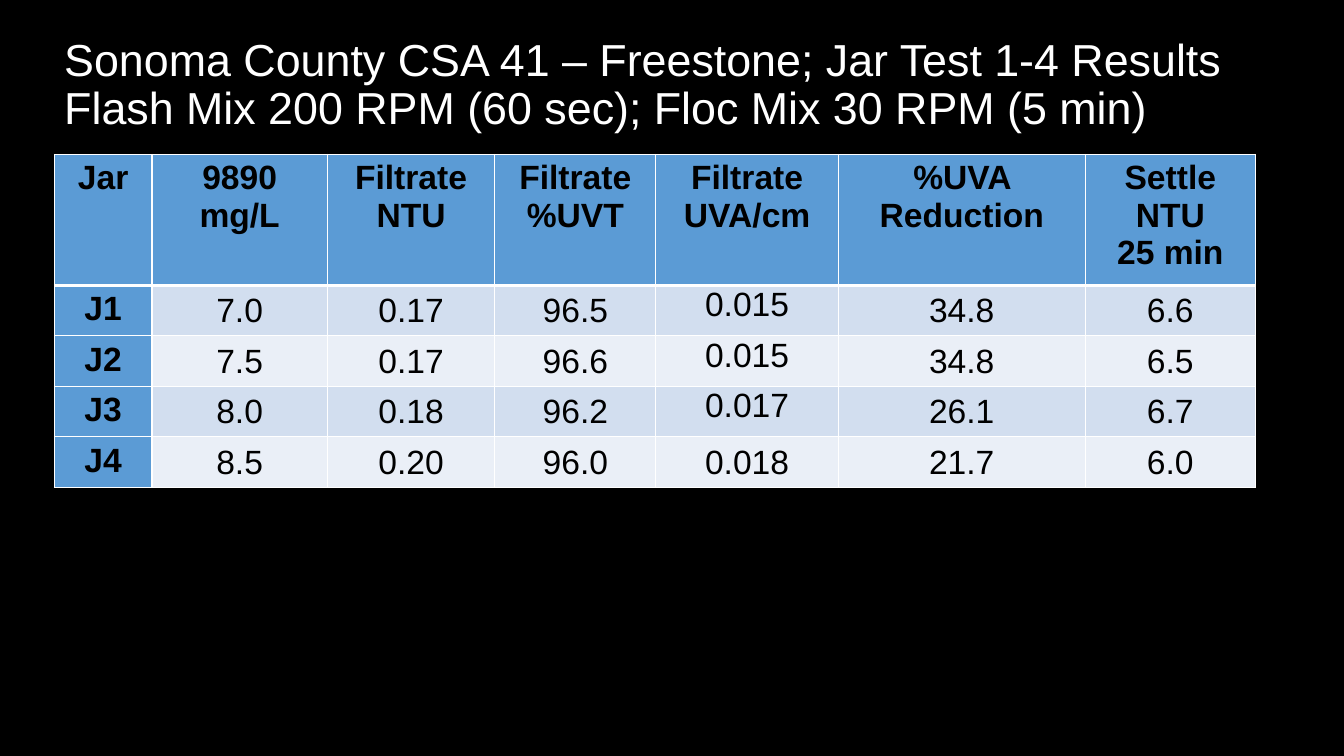
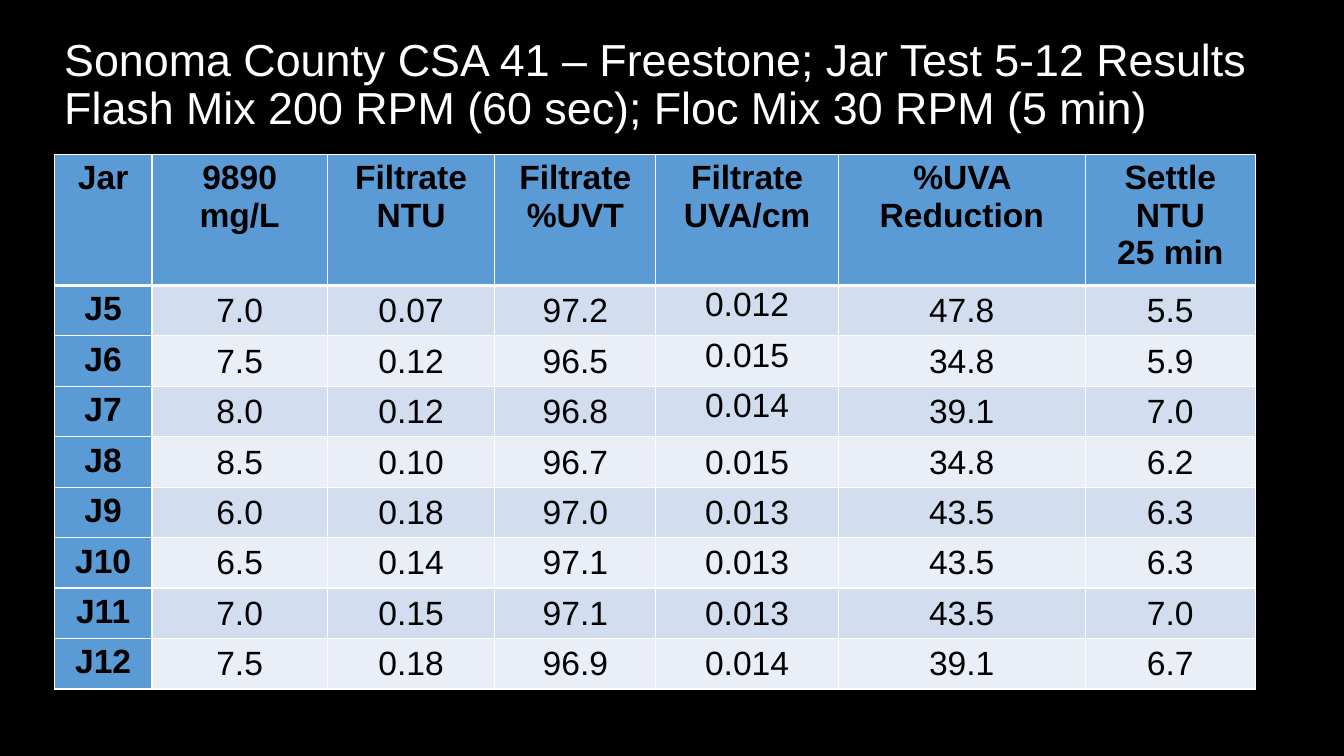
"""Builds two slides of jar test results."""
from lxml import etree
from pptx import Presentation
from pptx.dml.color import RGBColor
from pptx.enum.text import MSO_ANCHOR, PP_ALIGN
from pptx.oxml.ns import qn
from pptx.util import Cm, Pt

CENTER = PP_ALIGN.CENTER
TOP, MIDDLE = MSO_ANCHOR.TOP, MSO_ANCHOR.MIDDLE

COLORS = {
    "background": "000000",
    "title": "FFFFFF",
    "text": "000000",
    "border": "FFFFFF",
    "label": "5B9BD5",
    "odd": "D2DEEF",
    "even": "EAEFF7",
}
TITLE_FONT = {"name": "Arial", "size": Pt(32), "bold": False}
LABEL_FONT = {"name": "Arial", "size": Pt(24), "bold": True}
VALUE_FONT = {**LABEL_FONT, "bold": False}
LABEL_CELL = {"vertical_anchor": TOP}
VALUE_CELL = {
    "vertical_anchor": MIDDLE,
    "margin_left": Cm(0.02),
    "margin_right": Cm(0.02),
    "margin_top": Cm(0.02),
    "margin_bottom": Cm(0),
}

LEFT = 1.37
COLUMN_WIDTHS = [2.46, 4.42, 4.22, 4.06, 4.6, 6.22, 4.29]
HEADER_HEIGHT, ROW_HEIGHT = 3.07, 1.2
THIN, THICK = 1, 3
UVA_COLUMN, LAST_RAISED_ROW = 4, 3

HEADERS = [
    "Jar", "9890\nmg/L", "Filtrate\nNTU", "Filtrate\n%UVT",
    "Filtrate\nUVA/cm", "%UVA Reduction", "Settle\nNTU\n25 min",
]
JAR_TESTS = {
    "1-4": [
        ["J1", "7.0", "0.17", "96.5", "0.015", "34.8", "6.6"],
        ["J2", "7.5", "0.17", "96.6", "0.015", "34.8", "6.5"],
        ["J3", "8.0", "0.18", "96.2", "0.017", "26.1", "6.7"],
        ["J4", "8.5", "0.20", "96.0", "0.018", "21.7", "6.0"],
    ],
    "5-12": [
        ["J5", "7.0", "0.07", "97.2", "0.012", "47.8", "5.5"],
        ["J6", "7.5", "0.12", "96.5", "0.015", "34.8", "5.9"],
        ["J7", "8.0", "0.12", "96.8", "0.014", "39.1", "7.0"],
        ["J8", "8.5", "0.10", "96.7", "0.015", "34.8", "6.2"],
        ["J9", "6.0", "0.18", "97.0", "0.013", "43.5", "6.3"],
        ["J10", "6.5", "0.14", "97.1", "0.013", "43.5", "6.3"],
        ["J11", "7.0", "0.15", "97.1", "0.013", "43.5", "7.0"],
        ["J12", "7.5", "0.18", "96.9", "0.014", "39.1", "6.7"],
    ],
}


def apply(target, values):
    """Set each named attribute of the target."""
    for name, value in values.items():
        setattr(target, name, value)


class Deck:
    """Holds the shared style and the current slide."""

    def __init__(self):
        """Start a widescreen presentation."""
        self.presentation = Presentation()
        apply(self.presentation, {"slide_width": Cm(33.87), "slide_height": Cm(19.05)})
        self.slide = None

    def add_slide(self):
        """Add a blank slide with the dark background."""
        self.slide = self.presentation.slides.add_slide(self.presentation.slide_layouts[6])
        self.paint(self.slide.background.fill, "background")

    def paint(self, fill, color):
        """Fill with a named colour."""
        fill.solid()
        fill.fore_color.rgb = RGBColor.from_string(COLORS[color])

    def style_runs(self, frame, font, color, paragraph_format):
        """Format every paragraph and run of a text frame."""
        for paragraph in frame.paragraphs:
            apply(paragraph, paragraph_format)
            for run in paragraph.runs:
                apply(run.font, font)
                run.font.color.rgb = RGBColor.from_string(COLORS[color])

    def add_title(self, text):
        """Place the slide title."""
        title = self.slide.shapes.add_textbox(Cm(LEFT), Cm(0.33), Cm(31.98), Cm(3.68))
        frame = title.text_frame
        apply(frame, {"word_wrap": True, "vertical_anchor": MIDDLE})
        frame.paragraphs[0].text = text
        self.style_runs(frame, TITLE_FONT, "title", {"line_spacing": 0.9})

    def add_borders(self, cell, top, bottom):
        """Draw the four borders of a cell."""
        properties = cell._tc.get_or_add_tcPr()
        for side, width in (("L", THIN), ("R", THIN), ("T", top), ("B", bottom)):
            line = etree.SubElement(properties, qn(f"a:ln{side}"), w=str(Pt(width)))
            fill = etree.SubElement(line, qn("a:solidFill"))
            etree.SubElement(fill, qn("a:srgbClr"), val=COLORS["border"])

    def add_cell(self, cell, text, row, column):
        """Write and format one table cell by its place in the grid."""
        is_label = row == 0 or column == 0
        cell.text = text
        apply(cell, LABEL_CELL if is_label else VALUE_CELL)
        if column == UVA_COLUMN and row <= LAST_RAISED_ROW:
            cell.vertical_anchor = TOP
        self.style_runs(cell.text_frame, LABEL_FONT if is_label else VALUE_FONT,
                        "text", {"alignment": CENTER})
        self.add_borders(cell, THICK if row == 1 else THIN, THICK if row == 0 else THIN)
        self.paint(cell.fill, "label" if is_label else "odd" if row % 2 else "even")

    def add_results(self, jars):
        """Place the results table under its header row."""
        rows = [HEADERS, *jars]
        heights = [HEADER_HEIGHT] + [ROW_HEIGHT] * len(jars)
        results = self.slide.shapes.add_table(
            len(rows), len(HEADERS), Cm(LEFT), Cm(3.89),
            Cm(sum(COLUMN_WIDTHS)), Cm(sum(heights))).table
        results.first_col = True
        for column, width in zip(results.columns, COLUMN_WIDTHS):
            column.width = Cm(width)
        for row, (texts, height) in enumerate(zip(rows, heights)):
            results.rows[row].height = Cm(height)
            for column, text in enumerate(texts):
                self.add_cell(results.cell(row, column), text, row, column)


def main():
    """Build and save the presentation."""
    deck = Deck()
    for tests, jars in JAR_TESTS.items():
        deck.add_slide()
        deck.add_title(f"Sonoma County CSA 41 – Freestone; Jar Test {tests} Results\v"
                       "Flash Mix 200 RPM (60 sec); Floc Mix 30 RPM (5 min)")
        deck.add_results(jars)
    deck.presentation.save("out.pptx")


if __name__ == "__main__":
    main()
